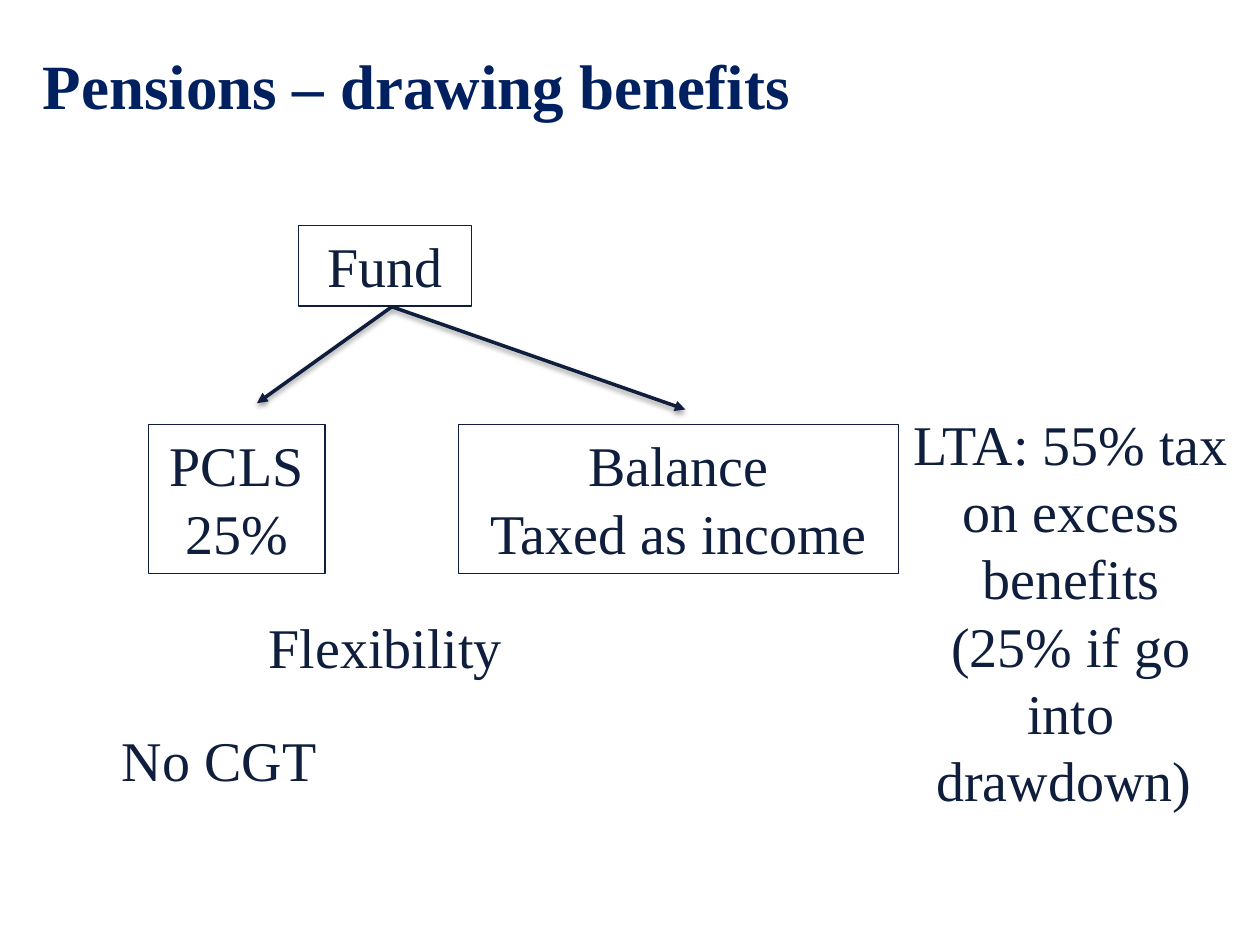
from lxml import etree
from pptx import Presentation
from pptx.dml.color import RGBColor
from pptx.enum.shapes import MSO_CONNECTOR as Connector, MSO_SHAPE as Shape
from pptx.enum.text import MSO_ANCHOR as Anchor, PP_ALIGN as Align
from pptx.oxml import parse_xml
from pptx.oxml.ns import nsdecls, qn
from pptx.util import Inches, Pt

COLORS = {"title": "002060", "ink": "0F1E3C", "shadow": "000000"}
FONT = "Times New Roman"

presentation = Presentation()
presentation.slide_width, presentation.slide_height = Inches(10), Inches(7.5)
slide = presentation.slides.add_slide(presentation.slide_layouts[5])

# Grid of 100 columns by 75 rows
COLUMN = presentation.slide_width / 100
ROW = presentation.slide_height / 75


def place(left, top, width, height):
    return [round(left * COLUMN), round(top * ROW),
            round(width * COLUMN), round(height * ROW)]


def write(shape, text, size=32, color="ink", bold=False,
          align=Align.CENTER, anchor=Anchor.TOP):
    frame = shape.text_frame
    frame.text = text
    frame.word_wrap = True
    frame.vertical_anchor = anchor
    for paragraph in frame.paragraphs:
        paragraph.alignment = align
        paragraph.space_before = Pt(0)
        font = paragraph.font
        font.name, font.size, font.bold = FONT, Pt(size), bold
        font.color.rgb = RGBColor.from_string(COLORS[color])


# Title
title = slide.shapes.title
title.left, title.top, title.width, title.height = place(2.4, 3.1, 84.8, 7.1)
write(title, "Pensions – drawing benefits", size=36, color="title", bold=True,
      align=Align.LEFT, anchor=Anchor.BOTTOM)

# Outlined boxes: the fund and its two parts
PARTS_TOP, PARTS_HEIGHT = 33.7, 11.8
boxes = [
    ("Balance\nTaxed as income", 36.4, PARTS_TOP, 34.9, PARTS_HEIGHT),
    ("Fund", 23.7, 17.9, 13.7, 6.4),
    ("PCLS\n25%", 11.8, PARTS_TOP, 14, PARTS_HEIGHT),
]
for text, *area in boxes:
    box = slide.shapes.add_shape(Shape.RECTANGLE, *place(*area))
    box.shadow.inherit = False
    box.fill.background()
    box.line.color.rgb = RGBColor.from_string(COLORS["ink"])
    box.line.width = Pt(0.75)
    write(box, text)

# Free-standing notes, all of one width
NOTE_WIDTH = 27.4
notes = [
    ("LTA: 55% tax on excess benefits\n(25% if go into drawdown) ", 71.3, 32, 27.9),
    ("Flexibility", 16.9, 48.1, 6.4),
    ("No CGT", 3.7, 57.1, 6.4),
]
for text, left, top, height in notes:
    note = slide.shapes.add_textbox(*place(left, top, NOTE_WIDTH, height))
    write(note, text)

# Arrows from the fund to its parts, with a soft shadow below
FORK = (31.1, 24.35)
for end_column, end_row in [(20.4, 32), (54.4, 32.5)]:
    arrow = slide.shapes.add_connector(
        Connector.STRAIGHT,
        *place(*FORK, end_column, end_row))
    arrow.line.color.rgb = RGBColor.from_string(COLORS["ink"])
    arrow.line.width = Pt(2)
    line_xml = arrow.line._get_or_add_ln()
    etree.SubElement(line_xml, qn("a:tailEnd"), type="triangle")
    arrow._element.spPr.append(parse_xml(
        f'<a:effectLst {nsdecls("a")}>'
        f'<a:outerShdw blurRad="{Pt(3.1)}" dist="{Pt(1.6)}" dir="5400000" rotWithShape="0">'
        f'<a:srgbClr val="{COLORS["shadow"]}"><a:alpha val="38000"/></a:srgbClr>'
        '</a:outerShdw></a:effectLst>'))

presentation.save("out.pptx")
